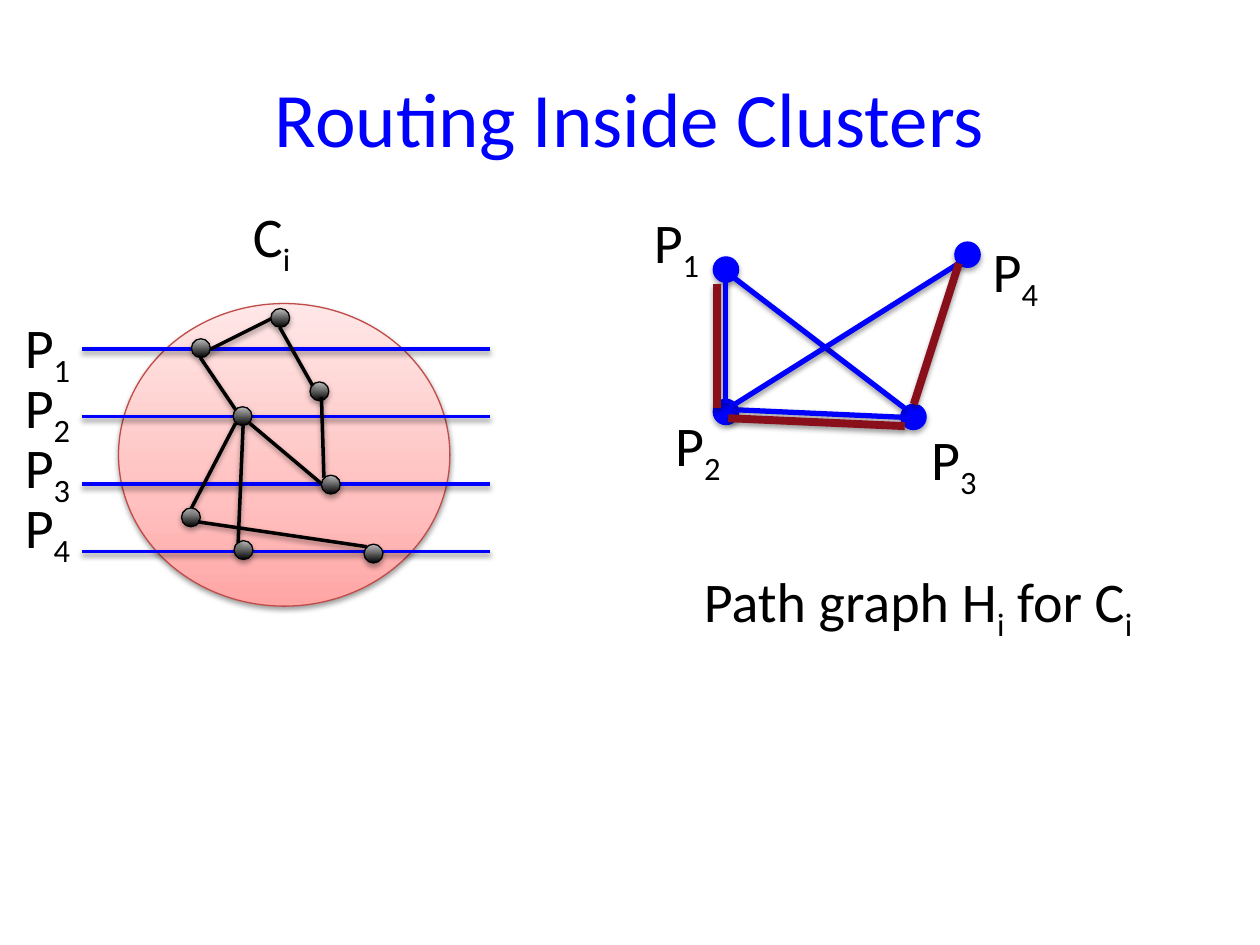
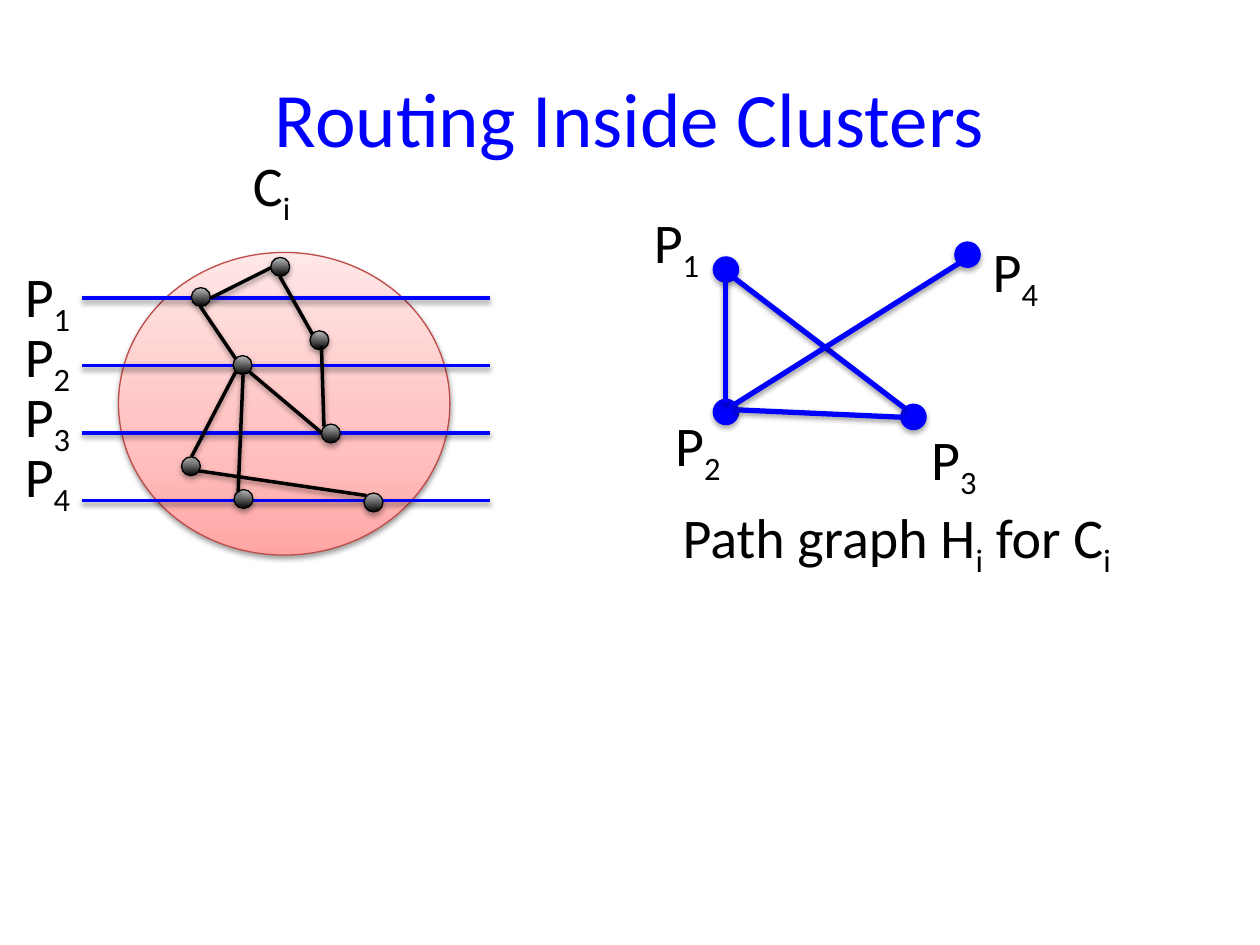
"""Build two slides on routing inside a cluster and its path graph."""
from copy import deepcopy
from dataclasses import dataclass

from lxml.etree import SubElement as Sub
from pptx import Presentation
from pptx.dml.color import RGBColor as Rgb
from pptx.enum.shapes import MSO_CONNECTOR as Link, MSO_SHAPE as Kind
from pptx.enum.text import MSO_ANCHOR as Anchor, PP_ALIGN as Align
from pptx.oxml.ns import qn
from pptx.util import Cm, Pt


@dataclass(frozen=True)
class Theme:
    font: str = "Calibri"
    head: int = 44
    body: int = 32
    blue: str = "0000FF"
    black: str = "000000"
    red: str = "89101B"
    rim: str = "BF4C48"
    rose: tuple = ((0, "FFA6A5"), (0.35, "FFC0BF"), (1, "FFE7E7"))
    grey: tuple = ((0, "000000"), (1, "BDBDBD"))
    thin: float = 0.75
    edge: float = 2
    link: float = 3
    tree: float = 4.5


THEME = Theme()
TITLE = "Routing Inside Clusters"
CAPTION = "Path graph H_i_ for C_i"
PATHS = ["P_1", "P_2", "P_3", "P_4"]
SLIDES = [
    {"lift": 0, "caption": (13.94, 11.3), "tree": True},
    {"lift": 1.03, "caption": (13.51, 10.01), "tree": False},
]

LABEL = (1.6, 1.63)
DISC = (2.39, 6.12, 6.68, 6.1)
NAME = (4.85, 3.94)
RAIL = {"left": 1.65, "right": 9.88, "top": 7.04, "step": 1.36}
TAGS = {"left": 0.25, "top": 6.17, "step": 1.21}
DOT = 0.38
DOTS = [(3.86, 6.83), (5.46, 6.22), (4.7, 8.2), (6.25, 7.7),
        (6.48, 9.58), (3.66, 10.24), (4.72, 10.9), (7.34, 10.97)]
EDGES = [
    (4.24, 7.04, 5.46, 6.43), (4.04, 7.21, 4.75, 8.26),
    (5.64, 6.6, 6.3, 7.77), (6.48, 8, 6.53, 9.63),
    (5.03, 8.53, 6.48, 9.75), (4.9, 8.59, 4.8, 10.95),
    (4.75, 8.53, 3.86, 10.24), (3.99, 10.52, 7.39, 11.02),
]
NODE = 0.51
NODES = [(14.38, 5.18), (14.38, 8.05), (18.16, 8.15), (19.25, 4.88)]
SPOTS = [(12.93, 4.06), (13.36, 8.15), (18.52, 8.43), (19.76, 4.65)]
LINKS = [
    (14.63, 5.61, 14.63, 8.13), (14.81, 5.61, 18.24, 8.23),
    (18.16, 8.41, 14.81, 8.26), (19.33, 5.31, 14.81, 8.15),
]
TREE = [
    (14.45, 5.72, 14.45, 8.23), (14.68, 8.43, 18.24, 8.59),
    (19.33, 5.31, 18.42, 8.15),
]


def shade(item, alpha=38, drop=1.6):
    """Give a drawn item a soft shadow straight below it."""
    fx = Sub(item._element.spPr, qn("a:effectLst"))
    cast = Sub(fx, qn("a:outerShdw"), blurRad=str(Pt(3.1)), dist=str(Pt(drop)),
               dir="5400000", rotWithShape="0")
    tint = Sub(cast, qn("a:srgbClr"), val=THEME.black)
    Sub(tint, qn("a:alpha"), val=str(alpha * 1000))


def write(box, text, size=THEME.body, color=THEME.black, align=Align.LEFT,
          anchor=Anchor.TOP):
    """Fill a box with text in which underscores switch subscript on and off."""
    frame = box.text_frame
    frame.word_wrap = True
    frame.vertical_anchor = anchor
    para = frame.paragraphs[0]
    para.alignment = align
    for turn, part in enumerate(text.split("_")):
        run = para.add_run()
        run.text = part
        run.font.name, run.font.size = THEME.font, Pt(size)
        run.font.color.rgb = Rgb.from_string(color)
        if turn % 2:
            run.font._element.set("baseline", "-25000")


def label(shapes, text, spot, size=LABEL):
    """Add a text box at a spot."""
    write(shapes.add_textbox(*map(Cm, spot + size)), text)


def blend(fill, stops):
    """Fill with colour stops that run from bottom to top."""
    fill.gradient()
    fill.gradient_angle = 90
    first = fill.gradient_stops[0]._gs
    for _ in stops[2:]:
        first.addnext(deepcopy(first))
    for stop, (place, color) in zip(fill.gradient_stops, stops):
        stop.position = place
        stop.color.rgb = Rgb.from_string(color)


def disc(shapes, box, paint, rim, **cast):
    """Add an ellipse with a plain colour or colour stops."""
    item = shapes.add_shape(Kind.OVAL, *map(Cm, box))
    if isinstance(paint, str):
        item.fill.solid()
        item.fill.fore_color.rgb = Rgb.from_string(paint)
    else:
        blend(item.fill, paint)
    item.line.color.rgb = Rgb.from_string(rim)
    item.line.width = Pt(THEME.thin)
    shade(item, **cast)


def dot(shapes, spot, size, paint, rim):
    """Add a small round node."""
    disc(shapes, spot + (size, size), paint, rim, alpha=35, drop=1.8)


def lines(shapes, ends, color, width):
    """Add straight lines of one style."""
    for span in ends:
        item = shapes.add_connector(Link.STRAIGHT, *map(Cm, span))
        item.line.color.rgb = Rgb.from_string(color)
        item.line.width = Pt(width)
        shade(item)


def cluster(shapes, lift):
    """Draw the cluster with its paths, moved up by the lift."""
    x, y, wide, high = DISC
    disc(shapes, (x, y - lift, wide, high), THEME.rose, THEME.rim)
    rows = [RAIL["top"] + i * RAIL["step"] - lift for i in range(len(PATHS))]
    lines(shapes, [(RAIL["left"], y, RAIL["right"], y) for y in rows],
          THEME.blue, THEME.edge)
    label(shapes, "C_i", (NAME[0], NAME[1] - lift))
    *early, last = [(x, y - lift) for x, y in DOTS]
    for spot in early:
        dot(shapes, spot, DOT, THEME.grey, THEME.black)
    lines(shapes, [(a, b - lift, c, d - lift) for a, b, c, d in EDGES],
          THEME.black, THEME.edge)
    dot(shapes, last, DOT, THEME.grey, THEME.black)
    group = shapes.add_group_shape().shapes
    for i, text in enumerate(PATHS):
        label(group, text, (TAGS["left"], TAGS["top"] + i * TAGS["step"] - lift))


def graph(shapes, caption, tree):
    """Draw the path graph, with its tree if wanted."""
    for spot in NODES:
        dot(shapes, spot, NODE, THEME.blue, THEME.blue)
    for text, spot in zip(PATHS, SPOTS):
        label(shapes, text, spot)
    lines(shapes, LINKS, THEME.blue, THEME.link)
    label(shapes, CAPTION, caption, (10.62, LABEL[1]))
    if tree:
        lines(shapes, TREE, THEME.red, THEME.tree)


def main():
    """Build and save the deck."""
    deck = Presentation()
    deck.slide_width, deck.slide_height = Cm(25.4), Cm(19.05)
    for page in SLIDES:
        shapes = deck.slides.add_slide(deck.slide_layouts[5]).shapes
        head = shapes.title
        head.left, head.top, head.width, head.height = map(
            Cm, (1.27, 0.76, 22.86, 3.18))
        write(head, TITLE, size=THEME.head, color=THEME.blue,
              align=Align.CENTER, anchor=Anchor.MIDDLE)
        cluster(shapes, page["lift"])
        graph(shapes, page["caption"], page["tree"])
    deck.save("out.pptx")


if __name__ == "__main__":
    main()
